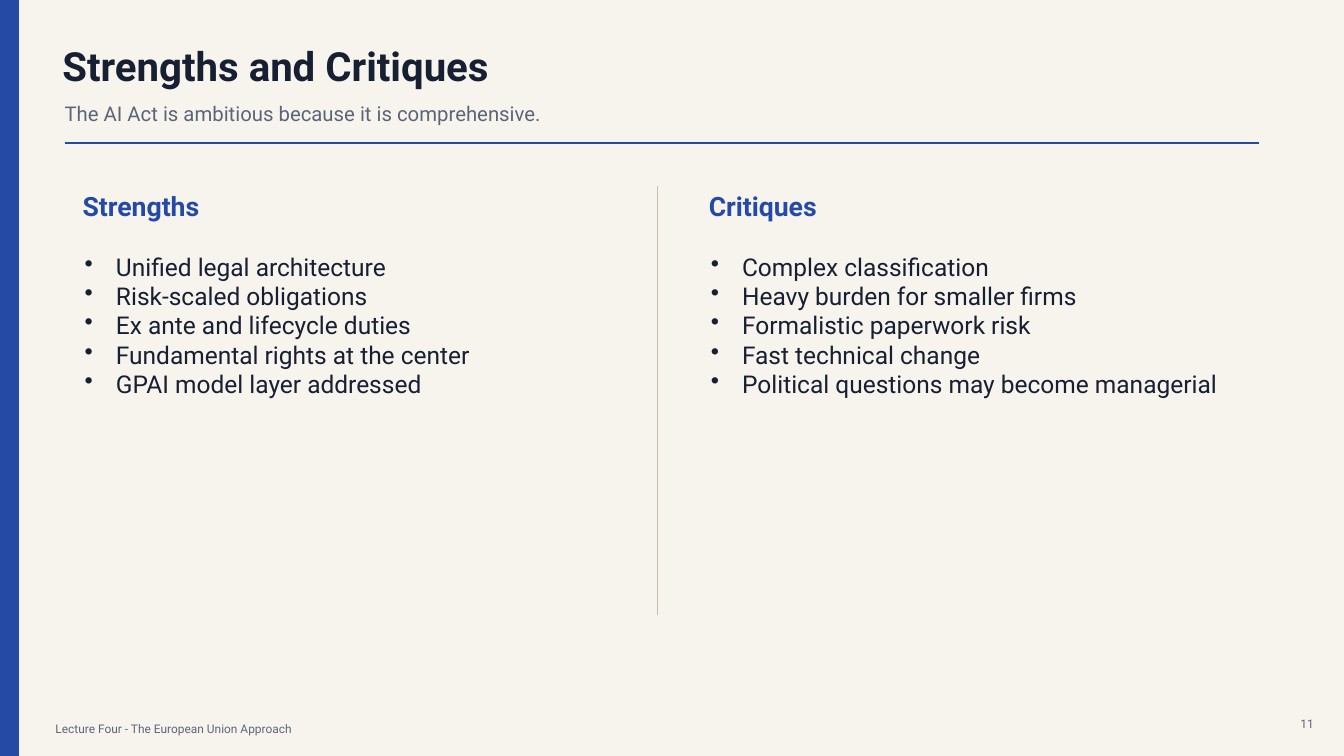
from dataclasses import dataclass

from lxml.etree import SubElement
from pptx import Presentation
from pptx.dml.color import RGBColor
from pptx.enum.shapes import MSO_CONNECTOR, MSO_SHAPE
from pptx.enum.text import MSO_ANCHOR, PP_ALIGN
from pptx.oxml.ns import qn
from pptx.util import Inches, Pt


@dataclass(frozen=True)
class Theme:
    font: str = "Roboto"
    paper: str = "F7F4EE"
    accent: str = "244AA5"
    ink: str = "172033"
    muted: str = "5B657A"
    divider: str = "C9BDAE"
    title: float = 28.7
    subtitle: float = 14.5
    heading: float = 19
    body: float = 17.5
    footer: float = 8.5


def rgb(value):
    return RGBColor.from_string(value)


class SlideBuilder:
    def __init__(self, slide, theme):
        self.slide = slide
        self.theme = theme
        fill = slide.background.fill
        fill.solid()
        fill.fore_color.rgb = rgb(theme.paper)

    def bar(self, x, y, w, h, color):
        sp = self.slide.shapes.add_shape(
            MSO_SHAPE.RECTANGLE, Inches(x), Inches(y), Inches(w), Inches(h))
        sp.shadow.inherit = False
        sp.fill.solid()
        sp.fill.fore_color.rgb = rgb(color)
        sp.line.color.rgb = rgb(color)
        sp.line.width = Pt(1)

    def line(self, x1, y1, x2, y2, color, width):
        cn = self.slide.shapes.add_connector(
            MSO_CONNECTOR.STRAIGHT, Inches(x1), Inches(y1), Inches(x2), Inches(y2))
        cn.line.color.rgb = rgb(color)
        cn.line.width = Pt(width)
        SubElement(cn._element.spPr, qn("a:effectLst"))

    def text(self, text, x, y, w, h, *, size, color, bold=False,
             align=PP_ALIGN.LEFT, bullets=False):
        """Add a text box with one paragraph per line of text."""
        box = self.slide.shapes.add_textbox(Inches(x), Inches(y), Inches(w), Inches(h))
        tf = box.text_frame
        tf.word_wrap = True
        tf.vertical_anchor = MSO_ANCHOR.MIDDLE
        tf.margin_left = tf.margin_top = tf.margin_right = tf.margin_bottom = 0
        tf.text = text
        for p in tf.paragraphs:
            p.alignment = align
            if bullets:
                self.bullet(p)
            for r in p.runs:
                r.font.name = self.theme.font
                r.font.size = Pt(size)
                r.font.bold = bold
                r.font.color.rgb = rgb(color)

    def bullet(self, p, indent=0.31):
        pPr = p._p.get_or_add_pPr()
        pPr.set("marL", str(Inches(indent)))
        pPr.set("indent", str(-Inches(indent)))
        SubElement(pPr, qn("a:buChar"), char="•")

    def column(self, x, heading, points):
        t = self.theme
        self.text(heading, x, 1.88, 5.35, 0.32, size=t.heading, color=t.accent, bold=True)
        self.text("\n".join(points), x + 0.02, 2.38, 5.25, 1.69,
                  size=t.body, color=t.ink, bullets=True)


STRENGTHS = [
    "Unified legal architecture",
    "Risk-scaled obligations",
    "Ex ante and lifecycle duties",
    "Fundamental rights at the center",
    "GPAI model layer addressed",
]
CRITIQUES = [
    "Complex classification",
    "Heavy burden for smaller firms",
    "Formalistic paperwork risk",
    "Fast technical change",
    "Political questions may become managerial",
]


def main():
    prs = Presentation()
    prs.slide_width, prs.slide_height = Inches(13.33), Inches(7.5)
    t = Theme()
    b = SlideBuilder(prs.slides.add_slide(prs.slide_layouts[6]), t)

    b.bar(0, 0, 0.18, 7.5, t.accent)
    b.text("Lecture Four - The European Union Approach", 0.55, 7.13, 9, 0.2,
           size=t.footer, color=t.muted)
    b.text("11", 12.75, 7.08, 0.28, 0.2, size=t.footer, color=t.muted,
           align=PP_ALIGN.RIGHT)

    b.text("Strengths and Critiques", 0.62, 0.42, 9.8, 0.45,
           size=t.title, color=t.ink, bold=True)
    b.text("The AI Act is ambitious because it is comprehensive.", 0.64, 0.95, 10.9, 0.35,
           size=t.subtitle, color=t.muted)
    b.line(0.64, 1.42, 12.49, 1.42, t.accent, 1.25)

    b.column(0.82, "Strengths", STRENGTHS)
    b.line(6.52, 1.85, 6.52, 6.1, t.divider, 1)
    b.column(7.03, "Critiques", CRITIQUES)

    prs.save("out.pptx")


if __name__ == "__main__":
    main()
